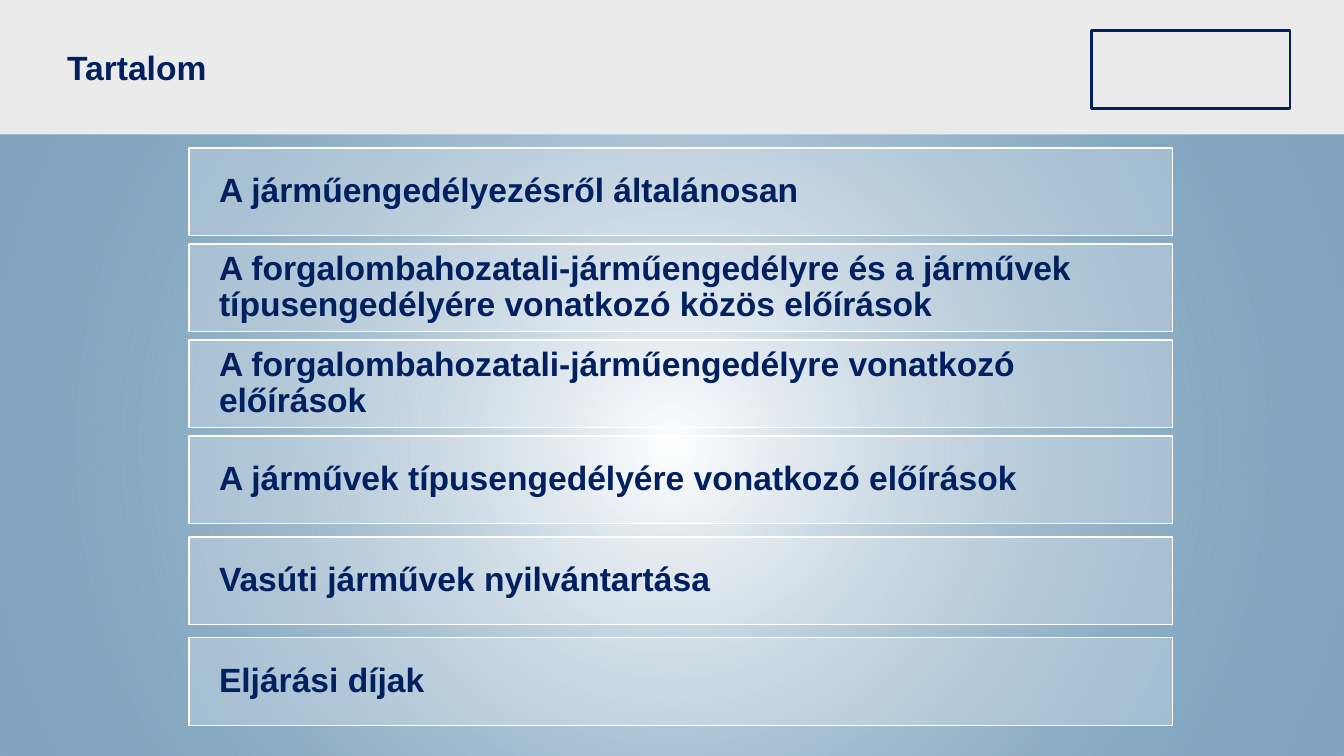
from itertools import accumulate

from lxml.etree import SubElement
from pptx import Presentation
from pptx.dml.color import RGBColor
from pptx.enum.shapes import MSO_SHAPE
from pptx.enum.text import MSO_ANCHOR, MSO_AUTO_SIZE, PP_ALIGN
from pptx.oxml.ns import qn
from pptx.util import Cm, Pt

COLOURS = {"navy": "002060", "white": "FFFFFF", "blue": "00487E", "header": "EBEBEB"}
FONT = {"name": "Arial", "size": Pt(24), "bold": True}
TITLE_FRAME = {"margin_left": 0, "margin_top": 0, "margin_right": 0, "margin_bottom": 0,
               "vertical_anchor": MSO_ANCHOR.MIDDLE, "word_wrap": True,
               "auto_size": MSO_AUTO_SIZE.NONE}
TOPIC_FRAME = {"margin_left": Cm(0.76), "margin_top": Cm(0.13), "margin_right": Cm(0.25),
               "margin_bottom": Cm(0.13), "vertical_anchor": MSO_ANCHOR.MIDDLE,
               "word_wrap": True}
WIDTH, HEIGHT, HEADER_HEIGHT = 33.87, 19.05, 3.39
TOPIC_HEIGHT = 2.21
TOPIC_STEPS = [2.42, 2.42, 2.42, 2.54, 2.54]
TOPICS = [
    "A járműengedélyezésről általánosan",
    "A forgalombahozatali-járműengedélyre és a járművek típusengedélyére vonatkozó közös előírások",
    "A forgalombahozatali-járműengedélyre vonatkozó előírások",
    "A járművek típusengedélyére vonatkozó előírások",
    "Vasúti járművek nyilvántartása",
    "Eljárási díjak",
]


def colour(name):
    return RGBColor.from_string(COLOURS[name])


def apply_format(target, values):
    for name, value in values.items():
        setattr(target, name, value)


def set_alpha(fill_element, percent):
    """Make the last RGB colour inside the element partly transparent."""
    last_colour = list(fill_element.iter(qn("a:srgbClr")))[-1]
    SubElement(last_colour, qn("a:alpha"), val=str(percent * 1000))


def add_rectangle(page, left, top, width, height):
    box = page.shapes.add_shape(MSO_SHAPE.RECTANGLE, Cm(left), Cm(top), Cm(width), Cm(height))
    box.shadow.inherit = False
    box.line.fill.background()
    return box


def write_text(box, text, frame_format, line_spacing):
    frame = box.text_frame
    apply_format(frame, frame_format)
    para = frame.paragraphs[0]
    apply_format(para, {"alignment": PP_ALIGN.LEFT, "line_spacing": line_spacing})
    span = para.add_run()
    span.text = text
    apply_format(span.font, FONT)
    span.font.color.rgb = colour("navy")


def add_glow(page, left, top, width, height):
    """Fill the area with a circular gradient, white in the middle."""
    box = add_rectangle(page, left, top, width, height)
    box.fill.gradient()
    for stop, name, position in zip(box.fill.gradient_stops, ("white", "blue"), (0, 1)):
        stop.color.rgb = colour(name)
        stop.position = position
    gradient = box._element.spPr.find(qn("a:gradFill"))
    set_alpha(gradient, 50)
    gradient.remove(gradient.find(qn("a:lin")))
    circle = SubElement(gradient, qn("a:path"), {"path": "circle"})
    SubElement(circle, qn("a:fillToRect"), dict.fromkeys("ltrb", "50000"))


def add_header(page, left, top, width, height):
    band = add_rectangle(page, left, top, width, height)
    band.fill.solid()
    band.fill.fore_color.rgb = colour("header")

    title = page.shapes.title
    apply_format(title, {"left": Cm(left + 1.69), "top": Cm(top + 0.42),
                         "width": Cm(width - 3.38), "height": Cm(height - 0.85)})
    write_text(title, "Tartalom", TITLE_FRAME, 1.0)
    page.shapes._spTree.append(title._element)  # bring in front of the band

    emblem = add_rectangle(page, left + width - 6.36, top + 0.76, 5, 1.98)
    emblem.fill.background()
    emblem.line.color.rgb = colour("navy")
    emblem.line.width = Pt(2)


def add_topics(page, left, top, width):
    for text, row_top in zip(TOPICS, accumulate(TOPIC_STEPS, initial=top)):
        box = add_rectangle(page, left, row_top, width, TOPIC_HEIGHT)
        box.fill.solid()
        box.fill.fore_color.rgb = colour("white")
        set_alpha(box._element.spPr.find(qn("a:solidFill")), 25)
        box.line.color.rgb = colour("white")
        box.line.width = Pt(1)
        write_text(box, text, TOPIC_FRAME, 0.9)


def main():
    deck = Presentation()
    deck.slide_width, deck.slide_height = Cm(WIDTH), Cm(HEIGHT)
    page = deck.slides.add_slide(deck.slide_layouts.get_by_name("Title Only"))
    add_glow(page, 0, HEADER_HEIGHT, WIDTH, HEIGHT - HEADER_HEIGHT)
    add_header(page, 0, 0, WIDTH, HEADER_HEIGHT)
    add_topics(page, 4.76, 3.73, 24.79)
    deck.save("out.pptx")


if __name__ == "__main__":
    main()
